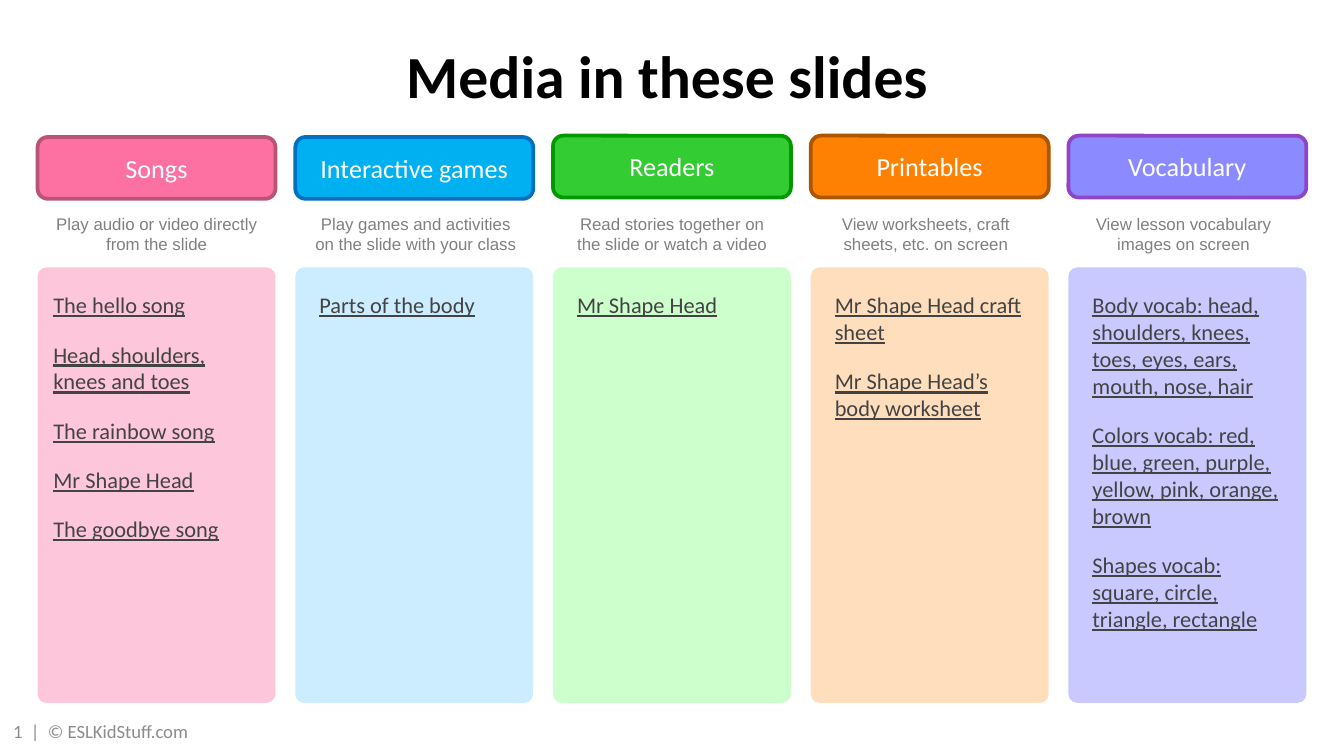
"""Build a slide that lists lesson media in five coloured columns."""
import pptx
import pptx.dml.color
import pptx.enum.shapes
import pptx.enum.text
import pptx.util

SLIDE_W = 10
SLIDE_H = SLIDE_W * 9 / 16
LEFT, LAST_LEFT, COL_W = 0.28, 7.95, 1.77
CAPTION_W = 1.71
HEADER_Y, CAPTION_Y, PANEL_Y = 1.02, 1.54, 1.99
HEADER_H, CAPTION_H, PANEL_H = 0.46, 0.4, 3.24

# heading, caption, items, header fill, header line, panel fill,
# caption shift, header shift, panel left inset
COLUMNS = [
    ("Songs", "Play audio or video directly from the slide",
     ["The hello song", "Head, shoulders, knees and toes", "The rainbow song",
      "Mr Shape Head", "The goodbye song"],
     "FC70A2", "BA5378", "FEC6DA", 0.03, 0, 0.1),
    ("Interactive games", "Play games and activities on the slide with your class",
     ["Parts of the body"],
     "00B0F0", "0070C0", "CCECFF", 0.04, 0, 0.16),
    ("Readers", "Read stories together on the slide or watch a video",
     ["Mr Shape Head"],
     "33CC33", "009900", "CCFFCC", 0.03, -0.01, 0.16),
    ("Printables", "View worksheets, craft sheets, etc. on screen",
     ["Mr Shape Head craft sheet", "Mr Shape Head’s body worksheet"],
     "FF8104", "AC5600", "FFDEBD", 0, -0.01, 0.16),
    ("Vocabulary", "View lesson vocabulary images on screen",
     ["Body vocab: head, shoulders, knees, toes, eyes, ears, mouth, nose, hair",
      "Colors vocab: red, blue, green, purple, yellow, pink, orange, brown",
      "Shapes vocab: square, circle, triangle, rectangle"],
     "8B8BFF", "8F45C7", "C9C9FF", 0, -0.01, 0.16),
]


def rgb(code):
    """Turn a hex string into a colour."""
    return pptx.dml.color.RGBColor.from_string(code)


def inches(*lengths):
    """Turn numbers into lengths in inches."""
    return [pptx.util.Inches(n) for n in lengths]


def write(sp, texts, size, color, font="Calibri", align="CENTER", anchor="TOP",
          insets=(0.1, 0.05, 0.1, 0.05), bold=False, underline=False, after=0):
    """Fill a shape with paragraphs of one style."""
    tf = sp.text_frame
    tf.word_wrap = True
    tf.auto_size = pptx.enum.text.MSO_AUTO_SIZE.NONE
    tf.vertical_anchor = pptx.enum.text.MSO_ANCHOR[anchor]
    tf.margin_left, tf.margin_top, tf.margin_right, tf.margin_bottom = inches(*insets)
    tf.text = "\n".join(texts)
    for p in tf.paragraphs:
        p.alignment = pptx.enum.text.PP_ALIGN[align]
        p.space_before, p.space_after = pptx.util.Pt(0), pptx.util.Pt(after)
        p.font.name, p.font.size = font, pptx.util.Pt(size)
        p.font.bold, p.font.underline = bold, underline
        p.font.color.rgb = rgb(color)


def add_text(s, box, text, size, color, **style):
    """Add a text box and return it."""
    sp = s.shapes.add_textbox(*inches(*box))
    write(sp, [text], size, color, **style)
    return sp


def add_card(s, box, fill, line=None):
    """Add a rounded rectangle, outlined if a line colour is given."""
    kind = pptx.enum.shapes.MSO_SHAPE.ROUNDED_RECTANGLE
    sp = s.shapes.add_shape(kind, *inches(*box))
    sp.shadow.inherit = False
    sp.fill.solid()
    sp.fill.fore_color.rgb = rgb(fill)
    if line:
        sp.line.color.rgb = rgb(line)
        sp.line.width = pptx.util.Pt(2)
    else:
        sp.line.fill.background()
    return sp


def add_column(s, left, heading, caption, items, fill, line, pale,
               caption_shift, header_shift, inset):
    """Add a column of header, caption and panel."""
    header = add_card(s, (left, HEADER_Y + header_shift, COL_W, HEADER_H), fill, line)
    write(header, [heading], 14, "FFFFFF", anchor="MIDDLE")
    note = add_text(s, (left + caption_shift, CAPTION_Y, CAPTION_W, CAPTION_H),
                    caption, 9, "808080", font="Arial")
    note.text_frame.auto_size = pptx.enum.text.MSO_AUTO_SIZE.SHAPE_TO_FIT_TEXT
    panel = add_card(s, (left, PANEL_Y, COL_W, PANEL_H), pale)
    panel.adjustments[0] = 0.037
    write(panel, items, 12, "434343", align="LEFT", underline=True, after=12,
          insets=(inset, 0.16, 0.1, 0.05))


def add_title(s, text):
    """Place and format the slide title."""
    sp = s.shapes.title
    sp.left, sp.top, sp.width, sp.height = inches(0.34, 0.24, 9.25, 0.54)
    write(sp, [text], 32, "000000", bold=True)


def main():
    """Build and save the slide."""
    prs = pptx.Presentation()
    prs.slide_width, prs.slide_height = inches(SLIDE_W, SLIDE_H)
    s = prs.slides.add_slide(prs.slide_layouts[5])
    add_title(s, "Media in these slides")
    pitch = (LAST_LEFT - LEFT) / (len(COLUMNS) - 1)
    for i, column in enumerate(COLUMNS):
        add_column(s, LEFT + i * pitch, *column)
    add_text(s, (0, 5.29, 2.17, 0.3), "1  |  © ESLKidStuff.com", 10, "8C8C8C",
             align="LEFT", anchor="MIDDLE")
    prs.save("out.pptx")


if __name__ == "__main__":
    main()
